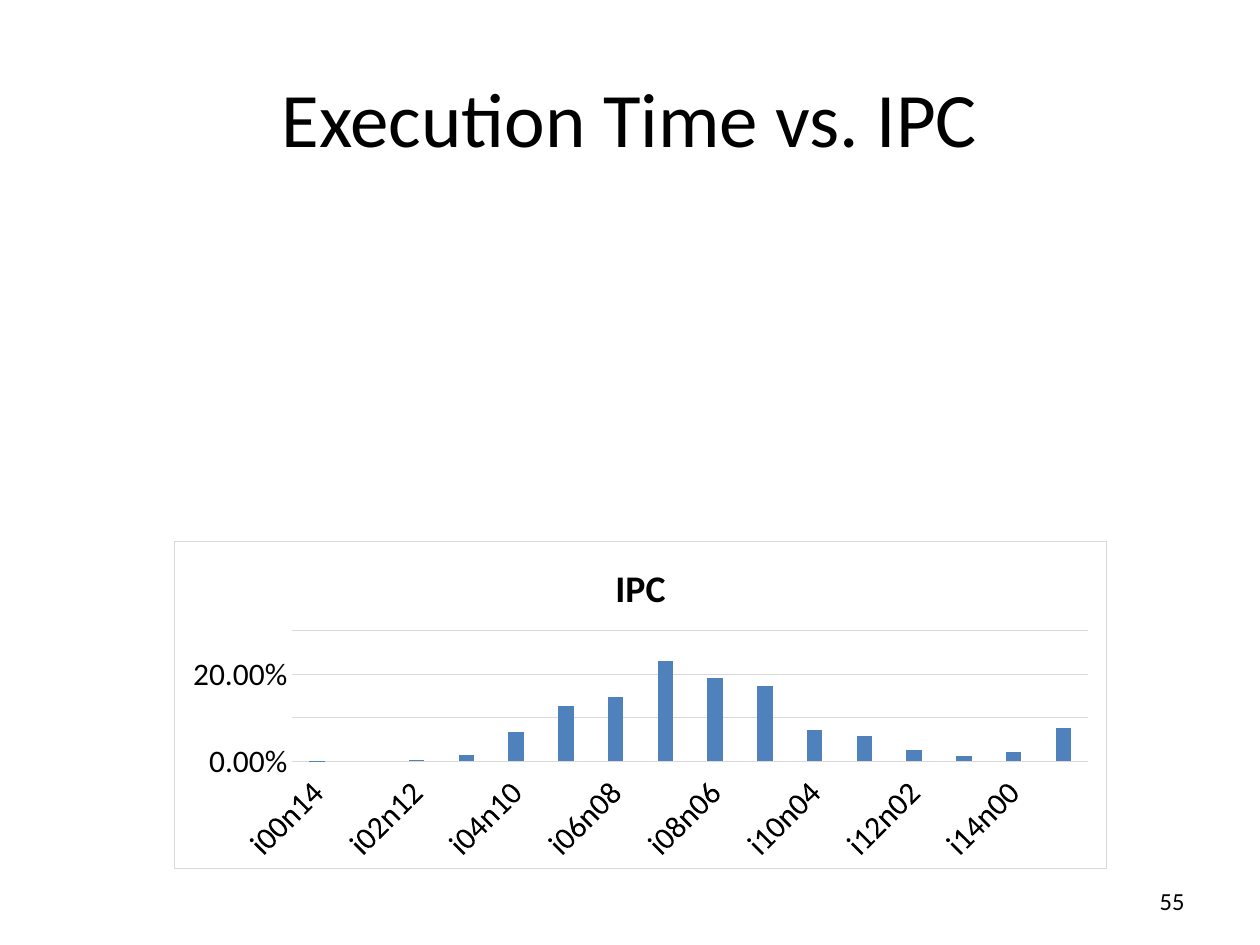
"""Build the slide comparing execution time with IPC."""
from dataclasses import dataclass

import pptx
import pptx.chart.data
import pptx.dml.color
import pptx.enum.chart
import pptx.enum.text
import pptx.oxml
import pptx.oxml.ns
import pptx.util

Inches = pptx.util.Inches
Pt = pptx.util.Pt
RGBColor = pptx.dml.color.RGBColor


@dataclass(frozen=True)
class Theme:
    font: str = "Calibri"
    text: str = "000000"
    background: str = "FFFFFF"
    line: str = "D9D9D9"
    bar: str = "4F81BD"
    title_size: float = 44
    number_size: float = 14
    chart_size: float = 18
    chart_title_size: float = 21.6
    line_width: float = 0.75


theme = Theme()


def style_font(font, size):
    font.name = theme.font
    font.size = Pt(size)
    font.color.rgb = RGBColor.from_string(theme.text)


def style_line(line):
    line.color.rgb = RGBColor.from_string(theme.line)
    line.width = Pt(theme.line_width)


presentation = pptx.Presentation()
presentation.slide_width = Inches(10)
presentation.slide_height = Inches(7.5)
slide = presentation.slides.add_slide(presentation.slide_layouts[6])
slide.background.fill.solid()
slide.background.fill.fore_color.rgb = RGBColor.from_string(theme.background)

Alignment = pptx.enum.text.PP_ALIGN
texts = [
    ("Execution Time vs. IPC", (0.5, 0.3, 9, 1.25), theme.title_size, Alignment.CENTER),
    ("55", (7.17, 6.95, 2.33, 0.4), theme.number_size, Alignment.RIGHT),
]
for text, box, size, alignment in texts:
    text_frame = slide.shapes.add_textbox(*map(Inches, box)).text_frame
    text_frame.word_wrap = True
    text_frame.vertical_anchor = pptx.enum.text.MSO_ANCHOR.MIDDLE
    paragraph = text_frame.paragraphs[0]
    paragraph.alignment = alignment
    run = paragraph.add_run()
    run.text = text
    style_font(run.font, size)

values = [0.001, -0.001, 0.002, 0.015, 0.066, 0.127, 0.148, 0.23,
          0.192, 0.172, 0.071, 0.057, 0.025, 0.011, 0.021, 0.076]
chart_data = pptx.chart.data.CategoryChartData(number_format="0.00%")
chart_data.categories = [f"i{i:02d}n{14 - i:02d}" for i in range(15)] + ["average"]
chart_data.add_series("IPC", values)
chart = slide.shapes.add_chart(
    pptx.enum.chart.XL_CHART_TYPE.COLUMN_CLUSTERED,
    Inches(1.38), Inches(4.29), Inches(7.41), Inches(2.61), chart_data,
).chart
chart.has_legend = False
style_font(chart.font, theme.chart_size)

chart.has_title = True
chart.chart_title.include_in_layout = False
run = chart.chart_title.text_frame.paragraphs[0].add_run()
run.text = "IPC"
style_font(run.font, theme.chart_title_size)
run.font.bold = True

plot = chart.plots[0]
plot.gap_width = 219
plot.overlap = -27
plot.vary_by_categories = False
series = plot.series[0]
series.invert_if_negative = False
series.format.fill.solid()
series.format.fill.fore_color.rgb = RGBColor.from_string(theme.bar)

category_axis = chart.category_axis
value_axis = chart.value_axis
for axis in (category_axis, value_axis):
    axis.major_tick_mark = pptx.enum.chart.XL_TICK_MARK.NONE
    axis.minor_tick_mark = pptx.enum.chart.XL_TICK_MARK.NONE
    style_font(axis.tick_labels.font, theme.chart_size)
category_axis.tick_label_position = pptx.enum.chart.XL_TICK_LABEL_POSITION.LOW
style_line(category_axis.format.line)
label_body = category_axis._element.find(".//" + pptx.oxml.ns.qn("a:bodyPr"))
label_body.set("rot", "-2700000")
label_body.set("vert", "horz")

value_axis.minimum_scale = 0
value_axis.maximum_scale = 0.3
value_axis.major_unit = 0.1
value_axis.tick_labels.number_format = "0.00%"
value_axis.tick_labels.number_format_is_linked = False
value_axis.format.line.fill.background()
style_line(value_axis.major_gridlines.format.line)

chart_frame = pptx.oxml.parse_xml(
    f'<c:spPr {pptx.oxml.ns.nsdecls("c", "a")}>'
    f'<a:solidFill><a:srgbClr val="{theme.background}"/></a:solidFill>'
    f'<a:ln w="{Pt(theme.line_width)}"><a:solidFill>'
    f'<a:srgbClr val="{theme.line}"/></a:solidFill></a:ln></c:spPr>'
)
chart._chartSpace.find(pptx.oxml.ns.qn("c:chart")).addnext(chart_frame)

presentation.save("out.pptx")
